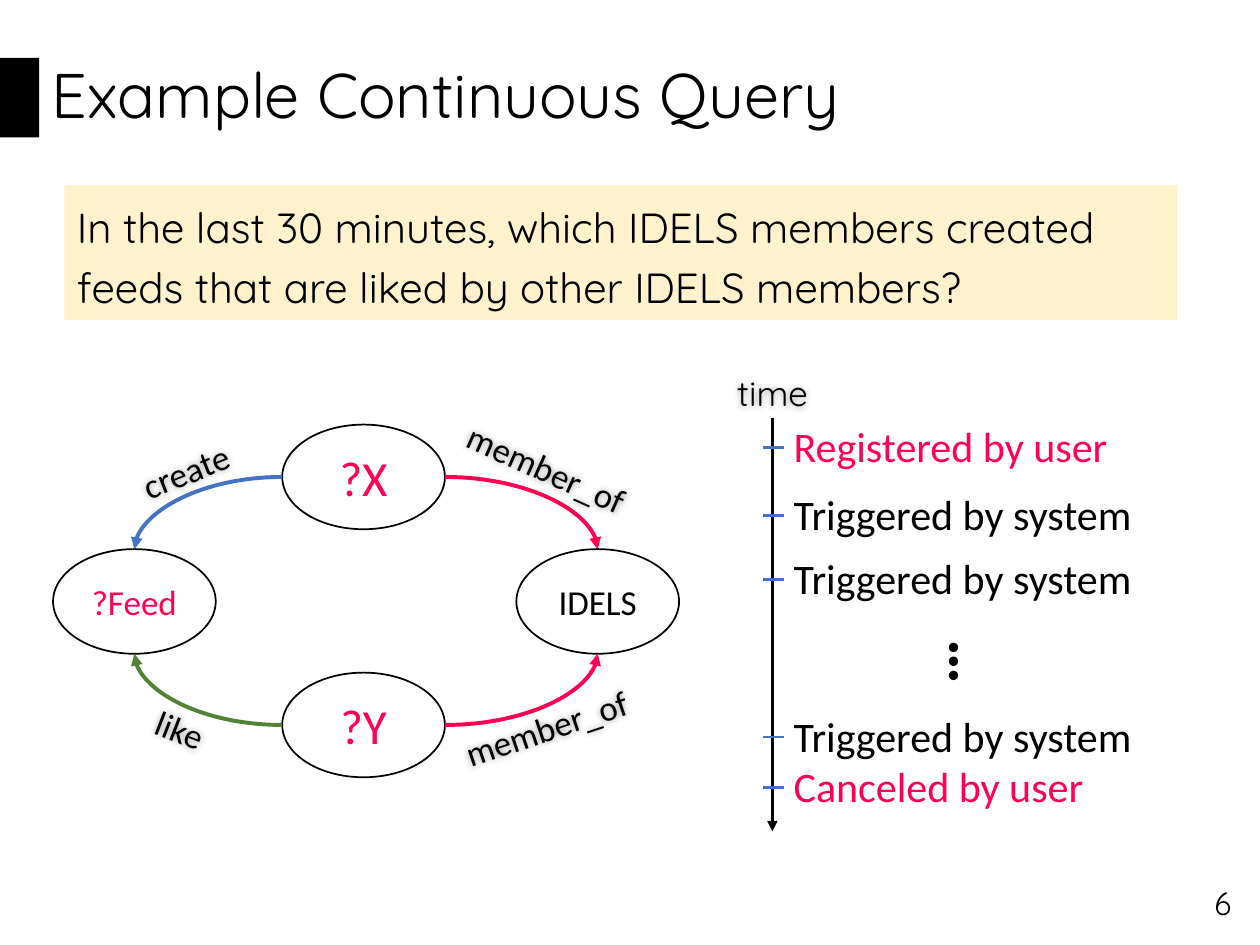
import pptx
import pptx.dml.color
import pptx.enum.shapes
import pptx.enum.text
import pptx.oxml.ns
import pptx.util
from lxml import etree

Cm = pptx.util.Cm
Pt = pptx.util.Pt
qn = pptx.oxml.ns.qn
Align = pptx.enum.text.PP_ALIGN
Anchor = pptx.enum.text.MSO_ANCHOR
Shape = pptx.enum.shapes.MSO_SHAPE
Connector = pptx.enum.shapes.MSO_CONNECTOR

BLACK, PINK, BLUE, GREEN = "000000", "FF0053", "4472C4", "548235"


def color(value):
    return pptx.dml.color.RGBColor.from_string(value)


def write(shape, text, size, font, value=BLACK, align=Align.LEFT, anchor=Anchor.TOP):
    frame = shape.text_frame
    frame.text = text
    frame.word_wrap = True
    frame.vertical_anchor = anchor
    para = frame.paragraphs[0]
    para.alignment = align
    span = para.runs[0]
    span.font.size = Pt(size)
    span.font.name = font
    span.font.color.rgb = color(value)
    return para


deck = pptx.Presentation()
deck.slide_width = Cm(25.4)
deck.slide_height = Cm(19.05)
page = deck.slides.add_slide(deck.slide_layouts[6])
shapes = page.shapes

number = shapes.add_textbox(Cm(23.27), Cm(17.7), Cm(1.8), Cm(1.02))
write(number, "6", 18, "Quicksand", align=Align.RIGHT, anchor=Anchor.MIDDLE)

title = shapes.add_textbox(Cm(0.79), Cm(0), Cm(24.61), Cm(3.94))
write(title, "Example Continuous Query", 36, "Quicksand", anchor=Anchor.MIDDLE).line_spacing = 0.9

marker = shapes.add_shape(Shape.RECTANGLE, Cm(0), Cm(1.17), Cm(0.79), Cm(1.6))
question = shapes.add_shape(Shape.RECTANGLE, Cm(1.3), Cm(3.73), Cm(22.43), Cm(2.72))
for box, fill in [(marker, BLACK), (question, "FFF2CC")]:
    box.shadow.inherit = False
    box.fill.solid()
    box.fill.fore_color.rgb = color(fill)
    box.line.fill.background()
para = write(
    question,
    "In the last 30 minutes, which IDELS members created feeds that are liked by other IDELS members?",
    24,
    "Quicksand",
)
para.line_spacing = 1.2

nodes = {}
for text, left, top, size, value in [
    ("?Y", 5.69, 13.56, 28, PINK),
    ("IDELS", 10.41, 11.07, 20, BLACK),
    ("?X", 5.69, 8.56, 28, PINK),
    ("?Feed", 1.07, 11.07, 20, PINK),
]:
    node = shapes.add_shape(Shape.OVAL, Cm(left), Cm(top), Cm(3.28), Cm(2.11))
    node.shadow.inherit = False
    node.fill.solid()
    node.fill.fore_color.rgb = color("FFFFFF")
    node.line.color.rgb = color(BLACK)
    node.line.width = Pt(1)
    write(node, text, size, "Calibri", value, Align.CENTER, Anchor.MIDDLE)
    nodes[text] = node

lines = []
for source, target, value in [
    ("?X", "IDELS", PINK),
    ("?Y", "IDELS", PINK),
    ("?X", "?Feed", BLUE),
    ("?Y", "?Feed", GREEN),
]:
    start, end = nodes[source], nodes[target]
    rightward = end.left > start.left
    downward = end.top > start.top
    curve = shapes.add_connector(
        Connector.CURVE,
        start.left + (start.width if rightward else 0),
        start.top + start.height // 2,
        end.left + end.width // 2,
        end.top + (0 if downward else end.height),
    )
    curve._element.spPr.find(qn("a:prstGeom")).set("prst", "curvedConnector2")
    joints = curve._element.nvCxnSpPr.cNvCxnSpPr
    for tag, node, site in [
        ("a:stCxn", start, 6 if rightward else 2),
        ("a:endCxn", end, 0 if downward else 4),
    ]:
        etree.SubElement(joints, qn(tag), id=str(node.shape_id), idx=str(site))
    lines.append((curve, value, 2.25, True))

for text, left, top, width, angle, font in [
    ("member_of", 9.02, 8.89, 3.99, 24.1, "Calibri"),
    ("member_of", 9.02, 14.12, 3.99, -18.5, "Calibri"),
    ("create", 1.75, 8.94, 3.99, -21.7, "Calibri"),
    ("like", 1.63, 14.15, 3.99, 21.3, "Calibri"),
    ("time", 14.33, 7.37, 2.49, 0, "Quicksand"),
]:
    label = shapes.add_textbox(Cm(left), Cm(top), Cm(width), Cm(1.12))
    label.rotation = angle
    write(label, text, 20, font, align=Align.CENTER)
    effects = etree.SubElement(label._element.spPr, qn("a:effectLst"))
    shadow = etree.SubElement(effects, qn("a:outerShdw"), blurRad="50800", dist="0", dir="0")
    shade = etree.SubElement(shadow, qn("a:srgbClr"), val=BLACK)
    etree.SubElement(shade, qn("a:alpha"), val="40000")

axis = shapes.add_connector(Connector.STRAIGHT, Cm(15.57), Cm(8.43), Cm(15.57), Cm(16.76))
lines.append((axis, BLACK, 1.5, True))

for text, middle, value in [
    ("Registered by user", 9.02, PINK),
    ("Triggered by system", 10.39, BLACK),
    ("Triggered by system", 11.68, BLACK),
    ("Triggered by system", 14.86, BLACK),
    ("Canceled by user", 15.88, PINK),
]:
    tick = shapes.add_connector(Connector.STRAIGHT, Cm(15.39), Cm(middle), Cm(15.8), Cm(middle))
    lines.append((tick, BLUE, 1.5, False))
    event = shapes.add_textbox(Cm(15.75), Cm(middle - 0.67), Cm(7.6), Cm(1.27))
    write(event, text, 24, "Calibri", value)

dots = shapes.add_textbox(Cm(18.92), Cm(12.45), Cm(1.42), Cm(1.8))
dots.rotation = 90
write(dots, "…", 36, "Calibri").runs[0].font.bold = True
dots.text_frame.word_wrap = False

for line, value, width, arrow in lines:
    line.line.color.rgb = color(value)
    line.line.width = Pt(width)
    if arrow:
        etree.SubElement(line._element.spPr.find(qn("a:ln")), qn("a:tailEnd"), type="triangle")
    etree.SubElement(line._element.spPr, qn("a:effectLst"))

deck.save("out.pptx")
